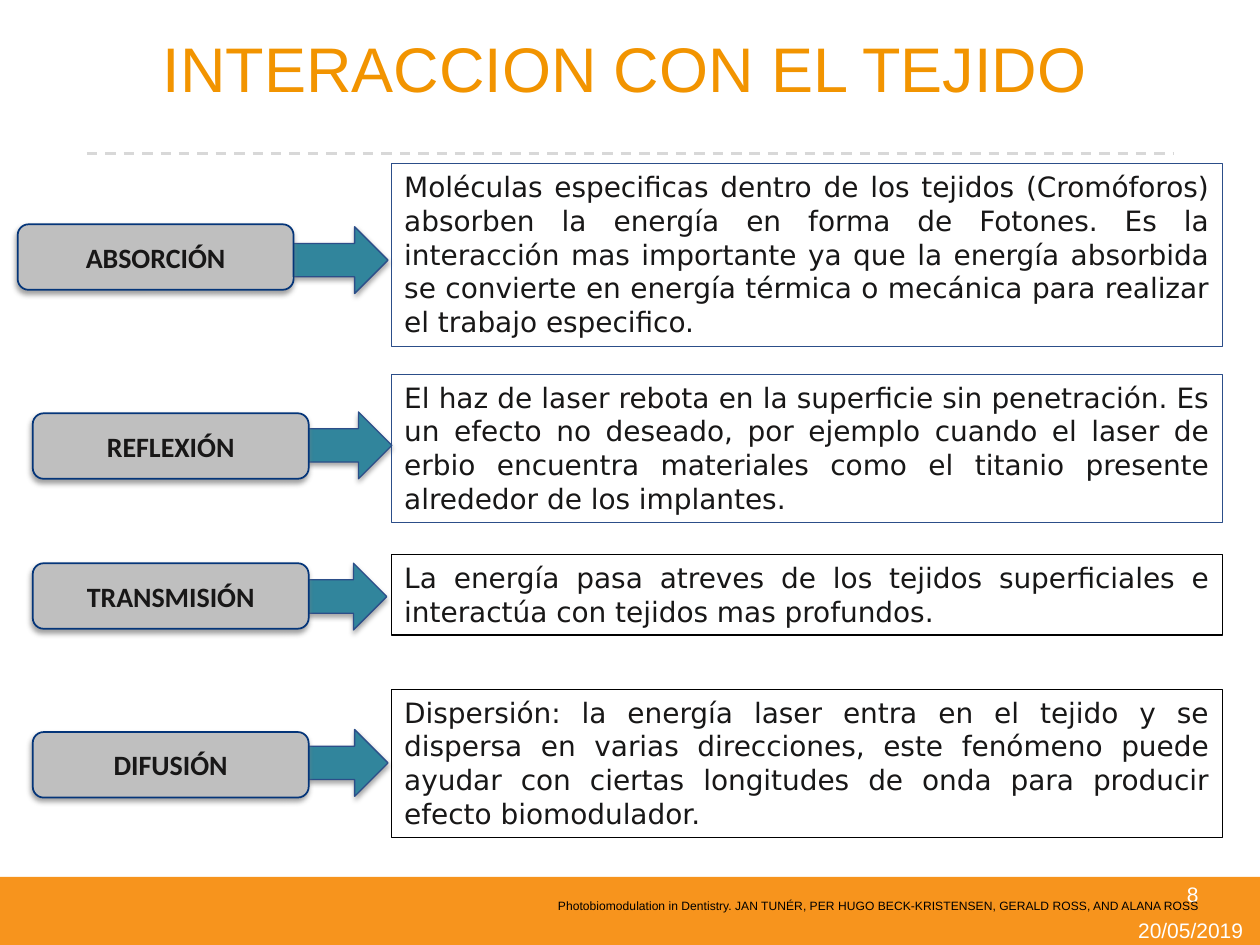
"""Build the slide on laser interaction with tissue."""
from dataclasses import dataclass
from typing import Optional

from lxml import etree
from pptx import Presentation
from pptx.dml.color import RGBColor
from pptx.enum.dml import MSO_LINE
from pptx.enum.shapes import MSO_CONNECTOR, MSO_SHAPE
from pptx.enum.text import MSO_ANCHOR, MSO_AUTO_SIZE, PP_ALIGN
from pptx.oxml.ns import qn
from pptx.util import Inches, Pt

CELL = 0.1
COLUMNS, ROWS = 100, 75
CENTER, JUSTIFY, LEFT = PP_ALIGN.CENTER, PP_ALIGN.JUSTIFY, PP_ALIGN.LEFT
MIDDLE, TOP = MSO_ANCHOR.MIDDLE, MSO_ANCHOR.TOP
RECTANGLE, ARROW = MSO_SHAPE.RECTANGLE, MSO_SHAPE.RIGHT_ARROW
ROUNDED = MSO_SHAPE.FLOWCHART_ALTERNATE_PROCESS
ORANGE, TITLE_ORANGE, TEAL, GRAY = "F7941D", "F29400", "31859C", "BFBFBF"
BLUE, NAVY, INK, BLACK, WHITE = "2C4E89", "043579", "181717", "000000", "FFFFFF"


@dataclass(frozen=True)
class Area:
    """Position and size in grid columns and rows."""
    column: float
    row: float
    columns: float
    rows: float


@dataclass(frozen=True)
class TextStyle:
    """Look of a text."""
    font: str
    size: float
    color: str
    align: PP_ALIGN = CENTER
    anchor: MSO_ANCHOR = MIDDLE
    bold: bool = False


@dataclass(frozen=True)
class Shadow:
    """Outer shadow; blur and distance in points, direction in degrees."""
    color: str
    opacity: int
    blur: float
    distance: float
    direction: int


@dataclass(frozen=True)
class Interaction:
    """A labelled effect with its arrow and description."""
    label: str
    description: str
    label_column: float
    label_row: float
    arrow_column: float
    arrow_row: float
    box_row: float
    box_rows: float
    box_line: str


TITLE = TextStyle("Arial", 36, TITLE_ORANGE)
FOOTER = TextStyle("Arial", 12, WHITE)
CITATION = TextStyle("Arial", 12, BLACK, LEFT, TOP)
LABEL = TextStyle("Calibri", 16, INK, bold=True)
BODY = TextStyle("DejaVu Sans", 16, INK, JUSTIFY, TOP)
ARROW_SHADOW = Shadow(BLACK, 35, 3.1, 1.8, 90)
LABEL_SHADOW = Shadow("808080", 75, 3, 2, 110)

INTERACTIONS = [
    Interaction(
        "ABSORCIÓN",
        "Moléculas especificas dentro de los tejidos (Cromóforos) absorben la energía "
        "en forma de Fotones. Es la interacción mas importante ya que la energía "
        "absorbida se convierte en energía térmica o mecánica para realizar el "
        "trabajo especifico.",
        1.4, 17.8, 20.1, 18, 13, 14.5, BLUE),
    Interaction(
        "REFLEXIÓN",
        "El haz de laser rebota en la superficie sin penetración. Es un efecto no "
        "deseado, por ejemplo cuando el laser de erbio encuentra materiales como el "
        "titanio presente alrededor de los implantes.",
        2.6, 32.8, 20.4, 32.7, 29.7, 11.8, BLUE),
    Interaction(
        "TRANSMISIÓN",
        "La energía pasa atreves de los tejidos superficiales e interactúa con "
        "tejidos mas profundos.",
        2.6, 44.7, 20, 44.7, 44, 6.4, BLACK),
    Interaction(
        "DIFUSIÓN",
        "Dispersión: la energía laser entra en el tejido y se dispersa en varias "
        "direcciones, este fenómeno puede ayudar con ciertas longitudes de onda para "
        "producir efecto biomodulador.",
        2.6, 58.1, 20.1, 57.9, 54.7, 11.8, BLACK),
]


def grid(cells: float) -> int:
    """Convert grid cells to a slide length."""
    return Inches(cells * CELL)


def place(area: Area) -> tuple:
    """Return left, top, width and height of an area."""
    return tuple(map(grid, (area.column, area.row, area.columns, area.rows)))


def color(value: str) -> RGBColor:
    """Convert a hex string to a colour."""
    return RGBColor.from_string(value)


def write(shape, text: str, style: TextStyle):
    """Put styled text in a shape and return its run."""
    frame = shape.text_frame
    frame.text = text
    frame.word_wrap = True
    frame.auto_size = MSO_AUTO_SIZE.NONE
    frame.vertical_anchor = style.anchor
    paragraph = frame.paragraphs[0]
    paragraph.alignment = style.align
    run = paragraph.runs[0]
    run.font.name = style.font
    run.font.size = Pt(style.size)
    run.font.bold = style.bold
    run.font.color.rgb = color(style.color)
    return run


def add_text(slide, area: Area, text: str, style: TextStyle):
    """Add a text box and return its run."""
    return write(slide.shapes.add_textbox(*place(area)), text, style)


def cast_shadow(shape, shadow: Shadow) -> None:
    """Give a shape an outer shadow."""
    effects = shape._element.spPr.find(qn("a:effectLst"))
    outer = etree.SubElement(
        effects, qn("a:outerShdw"), blurRad=str(Pt(shadow.blur)),
        dist=str(Pt(shadow.distance)), dir=str(shadow.direction * 60000),
        algn="ctr", rotWithShape="0")
    tint = etree.SubElement(outer, qn("a:srgbClr"), val=shadow.color)
    etree.SubElement(tint, qn("a:alpha"), val=str(shadow.opacity * 1000))


def add_box(slide, kind: MSO_SHAPE, area: Area, fill: Optional[str] = None,
            line: Optional[str] = None, width: float = 0.75,
            shadow: Optional[Shadow] = None):
    """Add a preset shape with its fill, line and shadow."""
    shape = slide.shapes.add_shape(kind, *place(area))
    shape.shadow.inherit = False
    if fill:
        shape.fill.solid()
        shape.fill.fore_color.rgb = color(fill)
    else:
        shape.fill.background()
    if line:
        shape.line.color.rgb = color(line)
        shape.line.width = Pt(width)
    else:
        shape.line.fill.background()
    if shadow:
        cast_shadow(shape, shadow)
    return shape


def add_divider(slide, row: float, margin: float) -> None:
    """Add the dashed line below the title."""
    divider = slide.shapes.add_connector(
        MSO_CONNECTOR.STRAIGHT, grid(margin), grid(row), grid(COLUMNS - margin), grid(row))
    divider.line.color.rgb = color("D8D8D8")
    divider.line.width = Pt(1.5)
    divider.line.dash_style = MSO_LINE.DASH
    etree.SubElement(divider._element.spPr, qn("a:effectLst"))


def add_interaction(slide, item: Interaction) -> None:
    """Add the arrow, label and description of an interaction."""
    add_box(slide, ARROW, Area(item.arrow_column, item.arrow_row, 10.7, 5.3),
            TEAL, BLUE, shadow=ARROW_SHADOW)
    label = add_box(slide, ROUNDED, Area(item.label_column, item.label_row, 21.9, 5.2),
                    GRAY, NAVY, 1, LABEL_SHADOW)
    write(label, item.label, LABEL)
    box = add_box(slide, RECTANGLE, Area(31.1, item.box_row, 65.9, item.box_rows),
                  line=item.box_line)
    write(box, item.description, BODY)


def main() -> None:
    """Build and save the presentation."""
    presentation = Presentation()
    presentation.slide_width, presentation.slide_height = grid(COLUMNS), grid(ROWS)
    slide = presentation.slides.add_slide(presentation.slide_layouts[6])
    add_box(slide, RECTANGLE, Area(0, 69.6, COLUMNS, 5.6), ORANGE)
    add_text(slide, Area(89.2, 72.8, 10.6, 2.1), "20/05/2019", FOOTER)
    add_divider(slide, 12.2, 6.9)
    add_text(slide, Area(6.5, 0, 86.2, 10.7), "INTERACCION CON EL TEJIDO", TITLE)
    add_text(slide, Area(89.4, 69.5, 10.5, 3), "8", FOOTER)
    for item in INTERACTIONS:
        add_interaction(slide, item)
    citation = add_text(
        slide, Area(43.3, 70.6, 54.9, 4.4),
        "Photobiomodulation in Dentistry. JAN TUNÉR, PER HUGO BECK-KRISTENSEN, "
        "GERALD ROSS, AND ALANA ROSS", CITATION)
    citation.font._element.set("baseline", "30000")
    presentation.save("out.pptx")


if __name__ == "__main__":
    main()
